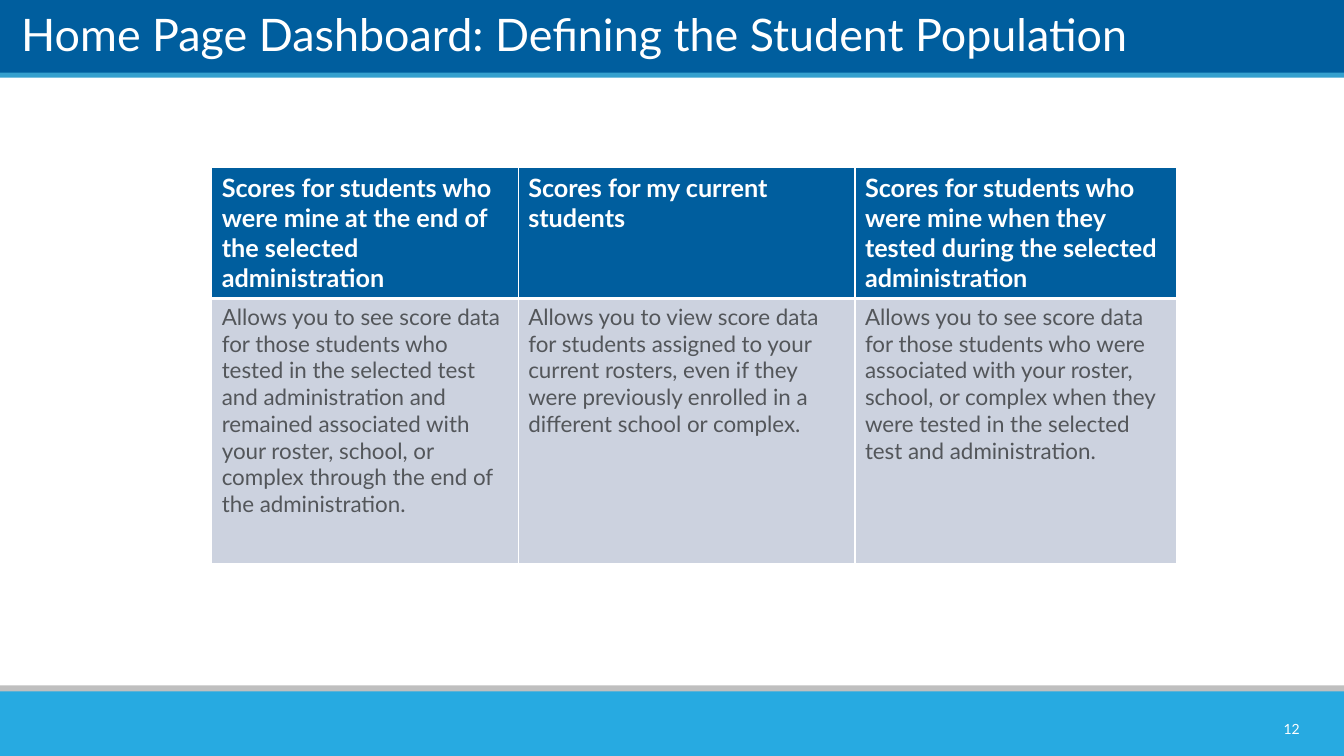
from dataclasses import dataclass

from lxml.etree import SubElement
from pptx import Presentation
from pptx.dml.color import RGBColor
from pptx.enum.shapes import MSO_SHAPE
from pptx.enum.text import MSO_ANCHOR, PP_ALIGN
from pptx.oxml.ns import qn
from pptx.slide import Slide
from pptx.table import _Cell
from pptx.text.text import TextFrame
from pptx.util import Inches, Pt

FONT = "Lato"
NAVY, WHITE, GRAY_TEXT, PALE = "005E9E", "FFFFFF", "53565A", "CCD2DF"


@dataclass
class Band:
    top: float
    height: float
    color: str


@dataclass
class Label:
    text: str
    left: float
    top: float
    width: float
    height: float
    size: int
    anchor: MSO_ANCHOR
    align: PP_ALIGN
    inset: float


@dataclass
class Population:
    heading: str
    description: str
    width: float


@dataclass
class RowStyle:
    height: float
    fill: str
    color: str
    size: int
    bold: bool
    top_line: float
    bottom_line: float


BANDS = [
    Band(-0.01, 0.75, NAVY),
    Band(0.72, 0.05, "35A0CE"),
    Band(6.8, 0.14, "BFBFBF"),
    Band(6.86, 0.64, "27AAE1"),
]
LABELS = [
    Label("Home Page Dashboard: Defining the Student Population",
          0.21, -1.08, 12.35, 1.68, 32, MSO_ANCHOR.BOTTOM, PP_ALIGN.LEFT, 0),
    Label("12", 12.56, 7.12, 0.43, 0.23, 10, MSO_ANCHOR.MIDDLE, PP_ALIGN.RIGHT, 0.1),
]
POPULATIONS = [
    Population(
        "Scores for students who were mine at the end of the selected administration",
        "Allows you to see score data for those students who tested in the selected test "
        "and administration and remained associated with your roster, school, or complex "
        "through the end of the administration.", 3.04),
    Population(
        "Scores for my current students",
        "Allows you to view score data for students assigned to your current rosters, "
        "even if they were previously enrolled in a different school or complex.", 3.34),
    Population(
        "Scores for students who were mine when they tested during the selected administration",
        "Allows you to see score data for those students who were associated with your "
        "roster, school, or complex when they were tested in the selected test and "
        "administration.", 3.19),
]
HEADER = RowStyle(1.3, NAVY, WHITE, 18, True, 1, 3)
BODY = RowStyle(2.63, PALE, GRAY_TEXT, 16, False, 3, 1)


def rgb(color: str) -> RGBColor:
    return RGBColor.from_string(color)


def write(frame: TextFrame, text: str, size: int, color: str, bold: bool = False) -> None:
    frame.text = text
    frame.word_wrap = True
    font = frame.paragraphs[0].runs[0].font
    font.name, font.size, font.bold = FONT, Pt(size), bold
    font.color.rgb = rgb(color)


def add_band(page: Slide, band: Band) -> None:
    bar = page.shapes.add_shape(MSO_SHAPE.RECTANGLE, 0, Inches(band.top),
                                Inches(13.33), Inches(band.height))
    bar.shadow.inherit = False
    bar.fill.solid()
    bar.fill.fore_color.rgb = rgb(band.color)
    bar.line.fill.background()


def add_label(page: Slide, label: Label) -> None:
    box = page.shapes.add_textbox(Inches(label.left), Inches(label.top),
                                  Inches(label.width), Inches(label.height))
    frame = box.text_frame
    write(frame, label.text, label.size, WHITE)
    frame.vertical_anchor = label.anchor
    frame.paragraphs[0].alignment = label.align
    frame.margin_left = frame.margin_right = Inches(label.inset)
    frame.margin_top = frame.margin_bottom = Inches(label.inset / 2)


def style_cell(cell: _Cell, text: str, style: RowStyle) -> None:
    write(cell.text_frame, text, style.size, style.color, style.bold)
    cell.vertical_anchor = MSO_ANCHOR.TOP
    properties = cell._tc.get_or_add_tcPr()
    borders = {"L": 1, "R": 1, "T": style.top_line, "B": style.bottom_line}
    for side, width in borders.items():
        line = SubElement(properties, qn(f"a:ln{side}"), w=str(Pt(width)))
        SubElement(SubElement(line, qn("a:solidFill")), qn("a:srgbClr"), val=WHITE)
    cell.fill.solid()
    cell.fill.fore_color.rgb = rgb(style.fill)


def add_population_table(page: Slide) -> None:
    width = sum(population.width for population in POPULATIONS)
    table = page.shapes.add_table(2, len(POPULATIONS), Inches(2.1), Inches(1.66),
                                  Inches(width), Inches(HEADER.height + BODY.height)).table
    for row, style in zip(table.rows, (HEADER, BODY)):
        row.height = Inches(style.height)
    for index, population in enumerate(POPULATIONS):
        table.columns[index].width = Inches(population.width)
        style_cell(table.cell(0, index), population.heading, HEADER)
        style_cell(table.cell(1, index), population.description, BODY)


def main() -> None:
    deck = Presentation()
    deck.slide_width, deck.slide_height = Inches(13.33), Inches(7.5)
    page = deck.slides.add_slide(deck.slide_layouts[6])
    for band in BANDS:
        add_band(page, band)
    for label in LABELS:
        add_label(page, label)
    add_population_table(page)
    deck.save("out.pptx")


if __name__ == "__main__":
    main()
